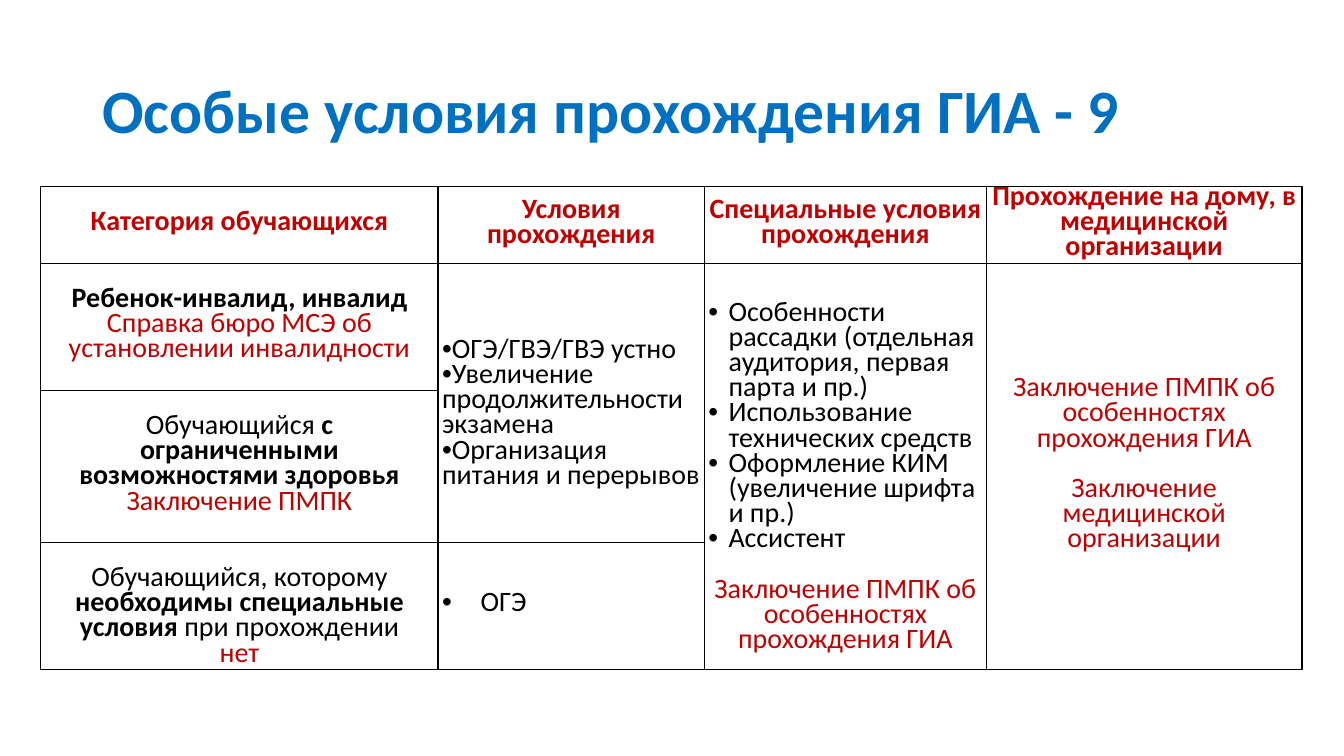
import pptx
import pptx.dml.color
import pptx.enum.text
import pptx.oxml.ns
import pptx.util
from lxml import etree

Cm, Pt = pptx.util.Cm, pptx.util.Pt
ALIGN = pptx.enum.text.PP_ALIGN
ANCHOR = pptx.enum.text.MSO_ANCHOR
FONT = "Calibri"
BLACK, RED, BLUE, WHITE = "000000", "C00000", "0070C0", "FFFFFF"
LINE = Pt(18)

COLUMN_WIDTHS = (10.01, 6.71, 7.11, 7.95)
ROW_HEIGHTS = (1.94, 3.2, 3.83, 3.2)


def color(value):
    return pptx.dml.color.RGBColor.from_string(value)


def line(*runs, bullet=None, gap=False):
    """Describe a paragraph: runs are (text, colour, bold), bullet is its hanging indent in cm."""
    return {"runs": runs, "bullet": bullet, "gap": gap}


def bullets(indent, *texts):
    return [line((text, BLACK, False), bullet=indent) for text in texts]


HEADINGS = (
    ["Категория обучающихся"],
    ["Условия прохождения"],
    ["Специальные условия", "прохождения"],
    ["Прохождение на дому, в медицинской организации"],
)
CATEGORIES = (
    [line(("Ребенок-инвалид, инвалид", BLACK, True)),
     line(("Справка бюро МСЭ об установлении инвалидности", RED, False))],
    [line(("Обучающийся ", BLACK, False),
          ("с ограниченными возможностями здоровья", BLACK, True)),
     line(("Заключение ПМПК", RED, False))],
    [line(("Обучающийся, которому ", BLACK, False),
          ("необходимы специальные условия ", BLACK, True),
          ("при прохождении", BLACK, False)),
     line(("нет", RED, False))],
)
CONDITIONS = bullets(0, "ОГЭ/ГВЭ/ГВЭ устно", "Увеличение продолжительности экзамена",
                     "Организация питания и перерывов")
EXAM_ONLY = bullets(0.97, "ОГЭ")
PMPK = ("Заключение ПМПК об особенностях прохождения ГИА", RED, False)
SPECIAL_CONDITIONS = bullets(
    0.51,
    "Особенности рассадки (отдельная аудитория, первая парта и пр.)",
    "Использование технических средств",
    "Оформление КИМ (увеличение шрифта и пр.)",
    "Ассистент",
) + [line(PMPK, gap=True)]
AT_HOME = [line(PMPK), line(("Заключение медицинской организации", RED, False), gap=True)]


def add_run(paragraph, text, size, hex_color, bold):
    run = paragraph.add_run()
    run.text = text
    run.font.name, run.font.size, run.font.bold = FONT, Pt(size), bold
    run.font.color.rgb = color(hex_color)


def add_bullet(paragraph, indent):
    properties = paragraph._p.get_or_add_pPr()
    properties.set("marL", str(Cm(indent)))
    properties.set("indent", str(-Cm(indent)))
    etree.SubElement(properties, pptx.oxml.ns.qn("a:buFont")).set("typeface", "Arial")
    etree.SubElement(properties, pptx.oxml.ns.qn("a:buChar")).set("char", "•")


def style_cell(cell, fill=None):
    """Set the fill, the narrow margins and a thin black border on all sides."""
    cell.margin_left = cell.margin_right = Cm(0.1)
    cell.margin_top, cell.margin_bottom = Cm(0.03), 0
    properties = cell._tc.get_or_add_tcPr()
    for side in ("lnL", "lnR", "lnT", "lnB"):
        border = etree.SubElement(properties, pptx.oxml.ns.qn("a:" + side), w=str(Pt(1)))
        solid = etree.SubElement(border, pptx.oxml.ns.qn("a:solidFill"))
        etree.SubElement(solid, pptx.oxml.ns.qn("a:srgbClr"), val=BLACK)
    if fill:
        cell.fill.solid()
        cell.fill.fore_color.rgb = color(fill)
    else:
        cell.fill.background()


def fill_cell(cell, lines, anchor=ANCHOR.MIDDLE, lowered=False):
    """Write the lines; a lowered cell starts one text line further down."""
    cell.vertical_anchor = anchor
    if lowered:
        cell.margin_top = Cm(0.03) + LINE
    frame = cell.text_frame
    for index, content in enumerate(lines):
        paragraph = frame.add_paragraph() if index else frame.paragraphs[0]
        if content["bullet"] is None:
            paragraph.alignment = ALIGN.CENTER
        else:
            paragraph.alignment = ALIGN.LEFT
            add_bullet(paragraph, content["bullet"])
        paragraph.line_spacing = LINE
        if content["gap"]:
            paragraph.space_before = LINE
        for text, hex_color, bold in content["runs"]:
            add_run(paragraph, text, 20, hex_color, bold)


def add_title(slide, left, top, width, height):
    frame = slide.shapes.add_textbox(Cm(left), Cm(top), Cm(width), Cm(height)).text_frame
    frame.word_wrap = True
    frame.vertical_anchor = ANCHOR.MIDDLE
    paragraph = frame.paragraphs[0]
    paragraph.line_spacing = 0.9
    add_run(paragraph, "Особые условия прохождения ГИА - 9", 44, BLUE, True)


def add_conditions_table(slide, left, top):
    table = slide.shapes.add_table(
        len(ROW_HEIGHTS), len(COLUMN_WIDTHS), Cm(left), Cm(top),
        Cm(sum(COLUMN_WIDTHS)), Cm(sum(ROW_HEIGHTS))).table
    table.first_row = table.horz_banding = False
    for column, width in zip(table.columns, COLUMN_WIDTHS):
        column.width = Cm(width)
    for index, (row, height) in enumerate(zip(table.rows, ROW_HEIGHTS)):
        row.height = Cm(height)
        for cell in row.cells:
            style_cell(cell, None if index else WHITE)

    for column, last_row in ((1, 2), (2, 3), (3, 3)):
        table.cell(1, column).merge(table.cell(last_row, column))

    for column, texts in enumerate(HEADINGS):
        fill_cell(table.cell(0, column), [line((text, RED, True)) for text in texts])
    for row, category in enumerate(CATEGORIES, 1):
        fill_cell(table.cell(row, 0), category, ANCHOR.TOP, lowered=True)
    fill_cell(table.cell(1, 1), CONDITIONS, lowered=True)
    fill_cell(table.cell(3, 1), EXAM_ONLY)
    fill_cell(table.cell(1, 2), SPECIAL_CONDITIONS, lowered=True)
    fill_cell(table.cell(1, 3), AT_HOME)


def main():
    presentation = pptx.Presentation()
    presentation.slide_width, presentation.slide_height = Cm(33.87), Cm(19.05)
    slide = presentation.slides.add_slide(presentation.slide_layouts[6])
    add_title(slide, 2.33, 1.01, 29.21, 3.68)
    add_conditions_table(slide, 1.03, 4.7)
    presentation.save("out.pptx")


if __name__ == "__main__":
    main()
